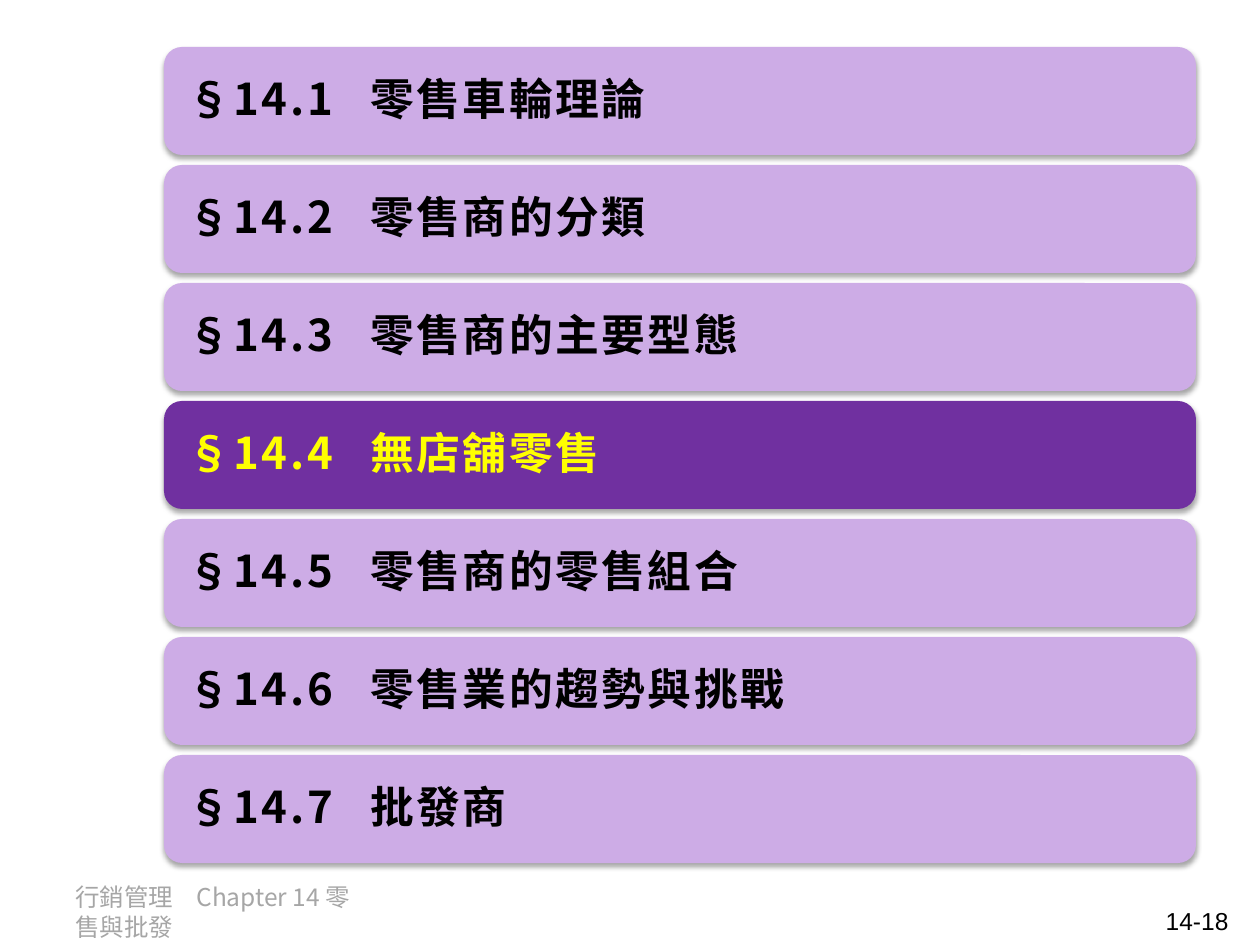
from pptx import Presentation
from pptx.dml.color import RGBColor
from pptx.enum.shapes import MSO_SHAPE
from pptx.enum.text import MSO_ANCHOR, PP_ALIGN
from pptx.oxml import parse_xml
from pptx.oxml.ns import nsdecls, qn
from pptx.util import Emu, Pt

PX = 914400 // 126
CJK = "Noto Sans CJK SC"
LATIN = "Arial"

SECTIONS = ["零售車輪理論", "零售商的分類", "零售商的主要型態", "無店舖零售",
            "零售商的零售組合", "零售業的趨勢與挑戰", "批發商"]
CURRENT = 4
BAR_LEFT, BAR_TOP, BAR_WIDTH, BAR_HEIGHT, BAR_PITCH = 164, 47, 1032, 108, 118
TITLE_TAB = 183
CHAPTER_TAB = 121

NORMAL_STYLE = {"fill": "CDACE6", "text": "000000"}
CURRENT_STYLE = {"fill": "7030A0", "text": "FFFF00"}


def px(*lengths):
    return [Emu(length * PX) for length in lengths]


def color(value):
    return RGBColor.from_string(value)


def add_xml(parent, body):
    parent.append(parse_xml(body.replace(">", f" {nsdecls('a')}>", 1)))


def add_tab_stop(paragraph, position):
    add_xml(paragraph._p.get_or_add_pPr(),
            f'<a:tabLst><a:tab pos="{position * PX}" algn="l"/></a:tabLst>')


def add_run(paragraph, text, font_name, size, text_color, bold=False, spacing=0):
    run = paragraph.add_run()
    run.text = text
    settings = {"name": font_name, "size": Pt(size), "bold": bold}
    for name, value in settings.items():
        setattr(run.font, name, value)
    run.font.color.rgb = color(text_color)
    properties = run.font._element
    add_xml(properties, f'<a:ea typeface="{CJK}"></a:ea>')
    if spacing:
        properties.set("spc", str(round(spacing * 100)))


def add_soft_shadow(shape):
    shape.shadow.inherit = False
    effects = shape._element.spPr.find(qn("a:effectLst"))
    add_xml(effects,
            f'<a:outerShdw blurRad="{Pt(3.1)}" dist="{Pt(1.8)}" dir="5400000" rotWithShape="0">'
            '<a:srgbClr val="000000"><a:alpha val="35000"/></a:srgbClr></a:outerShdw>')


def add_section_bar(slide, number, title):
    style = CURRENT_STYLE if number == CURRENT else NORMAL_STYLE
    top = BAR_TOP + (number - 1) * BAR_PITCH
    shape = slide.shapes.add_shape(MSO_SHAPE.ROUNDED_RECTANGLE,
                                   *px(BAR_LEFT, top, BAR_WIDTH, BAR_HEIGHT))
    shape.fill.solid()
    shape.fill.fore_color.rgb = color(style["fill"])
    shape.line.fill.background()
    add_soft_shadow(shape)

    frame = shape.text_frame
    inset, = px(18)
    settings = {"margin_left": inset, "margin_right": inset, "margin_top": inset,
                "margin_bottom": inset, "word_wrap": True,
                "vertical_anchor": MSO_ANCHOR.MIDDLE}
    for name, value in settings.items():
        setattr(frame, name, value)
    paragraph = frame.paragraphs[0]
    add_tab_stop(paragraph, TITLE_TAB)
    paragraph.alignment = PP_ALIGN.LEFT
    paragraph.line_spacing = 0.9
    for text, font_name in ((f"§14.{number}\t", CJK), (title, LATIN)):
        add_run(paragraph, text, font_name, 25, style["text"], bold=True, spacing=1.5)


def add_footer_text(slide, box, text, font_name, text_color, align, tab=None):
    frame = slide.shapes.add_textbox(*px(*box)).text_frame
    frame.word_wrap = True
    paragraph = frame.paragraphs[0]
    if tab:
        add_tab_stop(paragraph, tab)
    paragraph.alignment = align
    add_run(paragraph, text, font_name, 14, text_color)


def main():
    presentation = Presentation()
    presentation.slide_width, presentation.slide_height = px(1260, 945)
    slide = presentation.slides.add_slide(presentation.slide_layouts[6])
    add_footer_text(slide, (63, 876, 309, 50), "行銷管理\tChapter 14 零售與批發",
                    CJK, "A6A6A6", PP_ALIGN.LEFT, CHAPTER_TAB)
    add_footer_text(slide, (948, 900, 293, 36), "14-18", LATIN, "000000", PP_ALIGN.RIGHT)
    for number, title in enumerate(SECTIONS, start=1):
        add_section_bar(slide, number, title)
    presentation.save("out.pptx")


if __name__ == "__main__":
    main()
